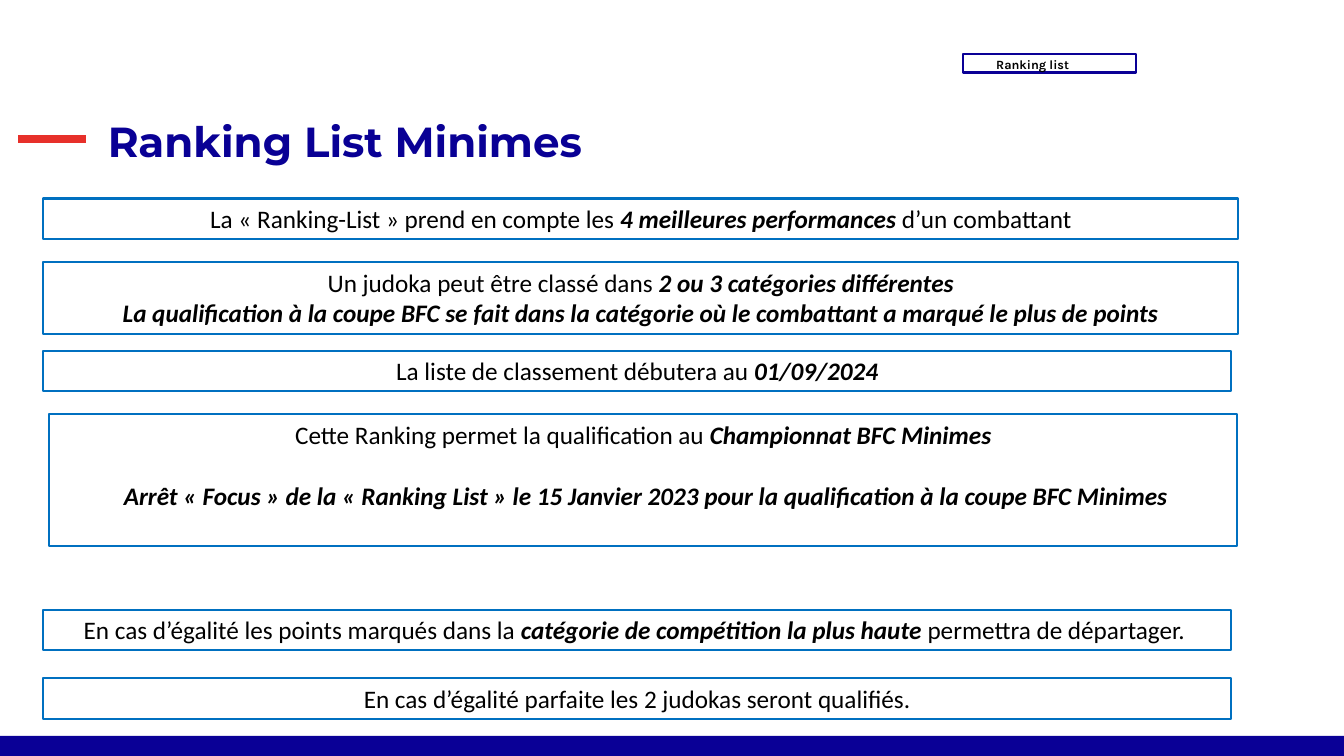
from lxml import etree
from pptx import Presentation, util as u
from pptx.dml.color import RGBColor
from pptx.enum import shapes, text
from pptx.oxml.ns import qn

NAVY, TITLE, RED, BLUE, BLACK = "0A0096", "090095", "E7302A", "0070C0", "000000"
TOP, BOTTOM = text.MSO_ANCHOR.TOP, text.MSO_ANCHOR.BOTTOM
LEFT, CENTER = text.PP_ALIGN.LEFT, text.PP_ALIGN.CENTER


def px(n):
    """Turn px (100 to the inch) into EMU."""
    return u.Emu(n * 9144)


def rgb(colour):
    return RGBColor.from_string(colour)


def set_all(target, values):
    for name, value in values.items():
        setattr(target, name, value)


class Deck:
    body = dict(name="Calibri", size=u.Pt(18))
    label = dict(name="Karla", size=u.Pt(9), bold=True)
    heading = dict(name="Montserrat", size=u.Pt(30), bold=True)
    strong = dict(bold=True, italic=True)

    def __init__(self, width, height):
        self.prs = Presentation()
        set_all(self.prs, dict(slide_width=px(width), slide_height=px(height)))
        self.s = self.prs.slides.add_slide(self.prs.slide_layouts[6])

    def rect(self, x, y, w, h, fill=None, line=None):
        sp = self.s.shapes.add_shape(shapes.MSO_SHAPE.RECTANGLE, px(x), px(y), px(w), px(h))
        sp.shadow.inherit = False
        if fill:
            sp.fill.solid()
            sp.fill.fore_color.rgb = rgb(fill)
        else:
            sp.fill.background()
        if line:
            sp.line.color.rgb = rgb(line)
            sp.line.width = u.Pt(1.5)
        else:
            sp.line.fill.background()
        return sp

    def dash(self, x1, x2, y, colour, weight):
        c = self.s.shapes.add_connector(shapes.MSO_CONNECTOR.STRAIGHT, px(x1), px(y), px(x2), px(y))
        c.line.color.rgb = rgb(colour)
        c.line.width = u.Pt(weight)
        etree.SubElement(c._element.spPr, qn("a:effectLst"))

    def put_text(self, sp, paragraphs, font, colour=BLACK, align=CENTER, anchor=TOP,
                 insets=(10, 5, 10, 5), spacing=1.0, gap=0):
        """Fill a shape; in each paragraph every second run is strong."""
        tf = sp.text_frame
        left, top, right, bottom = map(px, insets)
        set_all(tf, dict(word_wrap=True, vertical_anchor=anchor, margin_left=left,
                         margin_top=top, margin_right=right, margin_bottom=bottom))
        for i, runs in enumerate(paragraphs):
            p = tf.add_paragraph() if i else tf.paragraphs[0]
            set_all(p, dict(alignment=align, line_spacing=spacing))
            if i and gap:
                p.space_before = u.Pt(gap)
            for j, words in enumerate(runs):
                if not words:
                    continue
                r = p.add_run()
                r.text = words
                set_all(r.font, font | (self.strong if j % 2 else {}))
                r.font.color.rgb = rgb(colour)

    def title(self, x, y, w, h, words):
        sp = self.s.shapes.add_textbox(px(x), px(y), px(w), px(h))
        self.put_text(sp, [[words]], self.heading, TITLE, LEFT, BOTTOM, (0, 0, 0, 0), 0.9)

    def tag(self, x, y, w, h, words):
        sp = self.rect(x, y, w, h, line=NAVY)
        self.put_text(sp, [[words]], self.label, align=LEFT, insets=(33, 0, 0, 0), spacing=1.15)

    def rule(self, x, y, w, h, paragraphs, gap=0):
        self.put_text(self.rect(x, y, w, h, line=BLUE), paragraphs, self.body, gap=gap)


RULES = [
    (43, 197, 1185, 40, [["La « Ranking-List » prend en compte les ",
                          "4 meilleures performances ", "d’un combattant"]]),
    (43, 260, 1185, 71, [["Un judoka peut être classé dans ", "2 ou 3 catégories différentes"],
                         ["", "La qualification à la coupe BFC se fait dans la catégorie où "
                              "le combattant a marqué le plus de points"]]),
    (43, 348, 1178, 40, [["La liste de classement débutera au ", "01/09/2024"]]),
    (49, 411, 1178, 131, [["Cette Ranking permet la qualification au ", "Championnat BFC Minimes"],
                          ["", " Arrêt « Focus » de la « Ranking List » le 15 Janvier 2023 "
                               "pour la qualification à la coupe BFC Minimes"]], 22),
    (43, 605, 1178, 40, [["En cas d’égalité les points marqués dans la ",
                          "catégorie de compétition la plus haute ",
                          "permettra de départager. "]]),
    (43, 673, 1178, 40, [["En cas d’égalité parfaite les 2 judokas seront qualifiés."]]),
]


def main():
    deck = Deck(1333, 750)
    deck.rect(0, 730, 1333, 20, fill=NAVY)
    deck.tag(955, 54, 172, 18, "Ranking list")
    deck.dash(18, 85, 138, RED, 6)
    deck.title(107, 107, 1084, 58, "Ranking List Minimes")
    for rule in RULES:
        deck.rule(*rule)
    deck.prs.save("out.pptx")


if __name__ == "__main__":
    main()
